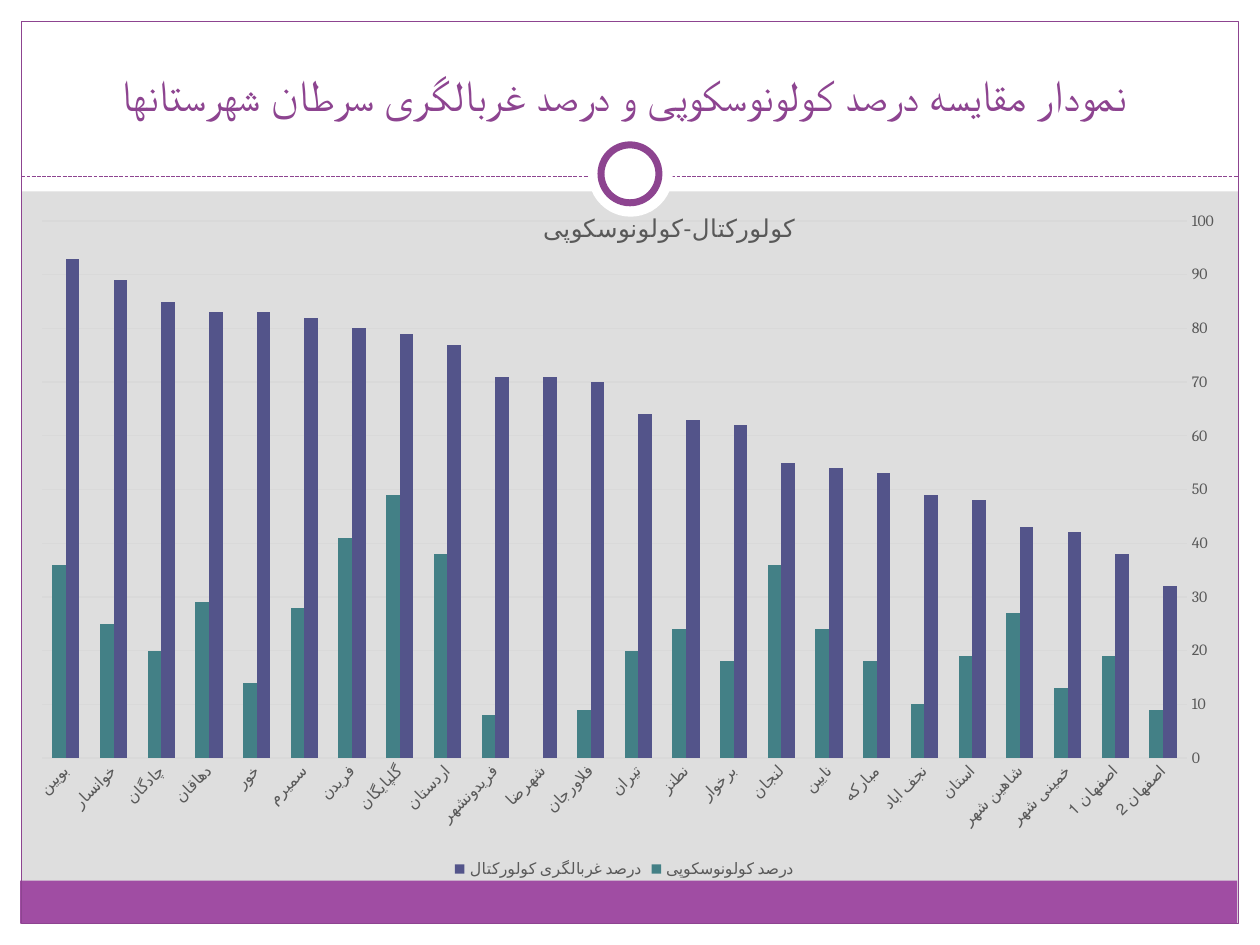
import dataclasses
from typing import Optional

import lxml.etree
import pptx
import pptx.chart.data
import pptx.dml.color
import pptx.enum.chart
import pptx.enum.dml
import pptx.enum.shapes
import pptx.enum.text
import pptx.oxml
import pptx.oxml.ns
import pptx.util

Inches = pptx.util.Inches
Pt = pptx.util.Pt
RGB = pptx.dml.color.RGBColor.from_string
SHAPE = pptx.enum.shapes.MSO_SHAPE
qn = pptx.oxml.ns.qn


@dataclasses.dataclass(frozen=True)
class Theme:
    font: str = "Cambria"
    background: str = "DEDEDE"
    white: str = "FFFFFF"
    band: str = "A04DA3"
    accent: str = "8D4490"
    muted: str = "595959"
    grid: str = "D9D9D9"
    screening: str = "53548A"
    colonoscopy: str = "438086"
    title_size: float = 25
    chart_title_size: float = 14
    label_size: float = 9
    hairline: float = 0.75
    ring: float = 4


@dataclasses.dataclass(frozen=True)
class Panel:
    left: float
    top: float
    width: float
    height: float
    fill: Optional[str] = None
    line: Optional[str] = None
    weight: float = 0.75
    kind: SHAPE = SHAPE.RECTANGLE


@dataclasses.dataclass(frozen=True)
class County:
    name: str
    screening: int
    colonoscopy: Optional[int]


T = Theme()

FRAME = [
    Panel(0, 7.33, 10, 0.17, T.white),
    Panel(0, 0, 10, 1.52, T.white),
    Panel(0, 0, 0.17, 7.5, T.white),
    Panel(9.83, 0, 0.17, 7.5, T.white),
    Panel(0.16, 6.99, 9.66, 0.34, T.band),
    Panel(0.17, 0.17, 9.66, 7.16, line=T.accent),
]
RING = [
    Panel(4.67, 1.05, 0.67, 0.67, T.white, kind=SHAPE.OVAL),
    Panel(4.77, 1.15, 0.46, 0.46, T.white, T.accent, T.ring, SHAPE.OVAL),
]
COUNTIES = [
    County("اصفهان 2", 32, 9),
    County("اصفهان 1", 38, 19),
    County("خمینی شهر", 42, 13),
    County("شاهین شهر", 43, 27),
    County("استان", 48, 19),
    County("نجف اباد", 49, 10),
    County("مبارکه", 53, 18),
    County("نایین", 54, 24),
    County("لنجان", 55, 36),
    County("برخوار", 62, 18),
    County("نطنز", 63, 24),
    County("تیران", 64, 20),
    County("فلاورجان", 70, 9),
    County("شهرضا", 71, None),
    County("فریدونشهر", 71, 8),
    County("اردستان", 77, 38),
    County("گلپایگان", 79, 49),
    County("فریدن", 80, 41),
    County("سمیرم", 82, 28),
    County("خور", 83, 14),
    County("دهاقان", 83, 29),
    County("چادگان", 85, 20),
    County("خوانسار", 89, 25),
    County("بویین", 93, 36),
]


def style_font(font, size: float, color: str) -> None:
    font.name = T.font
    font.size = Pt(size)
    font.bold = False
    font.color.rgb = RGB(color)


def draw_panel(s, panel: Panel) -> None:
    sp = s.shapes.add_shape(panel.kind, Inches(panel.left), Inches(panel.top),
                            Inches(panel.width), Inches(panel.height))
    sp.shadow.inherit = False
    if panel.fill:
        sp.fill.solid()
        sp.fill.fore_color.rgb = RGB(panel.fill)
    else:
        sp.fill.background()
    if panel.line:
        sp.line.color.rgb = RGB(panel.line)
        sp.line.width = Pt(panel.weight)
    else:
        sp.line.fill.background()


def draw_divider(s) -> None:
    line = s.shapes.add_connector(pptx.enum.shapes.MSO_CONNECTOR.STRAIGHT,
                                  Inches(0.17), Inches(1.4), Inches(9.83), Inches(1.4))
    line.line.color.rgb = RGB(T.accent)
    line.line.width = Pt(T.hairline)
    line.line.dash_style = pptx.enum.dml.MSO_LINE.SQUARE_DOT
    lxml.etree.SubElement(line.element.spPr, qn("a:effectLst"))


def draw_title(s, text: str) -> None:
    tf = s.shapes.add_textbox(Inches(0.29), Inches(0.42), Inches(9.33), Inches(0.58)).text_frame
    tf.word_wrap = True
    tf.vertical_anchor = pptx.enum.text.MSO_ANCHOR.BOTTOM
    p = tf.paragraphs[0]
    p.alignment = pptx.enum.text.PP_ALIGN.CENTER
    p.font.size = Pt(T.title_size)
    p._p.get_or_add_pPr().set("rtl", "1")
    r = p.add_run()
    r.text = text
    style_font(r.font, T.title_size, T.accent)


def place(parent, index: int, **box: float) -> None:
    for old in parent.findall(qn("c:layout")):
        parent.remove(old)
    layout = lxml.etree.Element(qn("c:layout"))
    manual = lxml.etree.SubElement(layout, qn("c:manualLayout"))
    if "w" in box:
        lxml.etree.SubElement(manual, qn("c:layoutTarget")).set("val", "inner")
    for mode in ("xMode", "yMode"):
        lxml.etree.SubElement(manual, qn(f"c:{mode}")).set("val", "edge")
    for key, value in box.items():
        lxml.etree.SubElement(manual, qn(f"c:{key}")).set("val", str(value))
    parent.insert(index, layout)


def draw_chart(s) -> None:
    data = pptx.chart.data.CategoryChartData(number_format="0")
    data.categories = [c.name for c in COUNTIES]
    data.add_series("درصد غربالگری کولورکتال", [c.screening for c in COUNTIES])
    data.add_series("درصد کولونوسکوپی", [c.colonoscopy for c in COUNTIES])
    chart = s.shapes.add_chart(pptx.enum.chart.XL_CHART_TYPE.COLUMN_CLUSTERED, Inches(0.08),
                               Inches(1.08), Inches(9.75), Inches(5.92), data).chart
    style_font(chart.font, T.label_size, T.muted)

    plot = chart.plots[0]
    plot.gap_width = 150
    plot.overlap = 0
    plot.vary_by_categories = False
    for series, color in zip(plot.series, (T.screening, T.colonoscopy)):
        series.format.fill.solid()
        series.format.fill.fore_color.rgb = RGB(color)

    for axis in (chart.category_axis, chart.value_axis):
        axis.major_tick_mark = axis.minor_tick_mark = pptx.enum.chart.XL_TICK_MARK.NONE
        axis.format.line.fill.background()
        style_font(axis.tick_labels.font, T.label_size, T.muted)
    chart.category_axis.reverse_order = True
    chart.value_axis.minimum_scale = 0
    chart.value_axis.maximum_scale = 100
    chart.value_axis.major_unit = 10
    grid = chart.value_axis.major_gridlines.format.line
    grid.color.rgb = RGB(T.grid)
    grid.width = Pt(T.hairline)

    chart.has_legend = True
    chart.legend.position = pptx.enum.chart.XL_LEGEND_POSITION.BOTTOM
    chart.legend.include_in_layout = False
    style_font(chart.legend.font, T.label_size, T.muted)

    r = chart.chart_title.text_frame.paragraphs[0].add_run()
    r.text = "کولورکتال-کولونوسکوپی"
    style_font(r.font, T.chart_title_size, T.muted)

    root = chart.element
    place(root.xpath("c:chart/c:title")[0], 1, x=0.43, y=0.1)
    place(root.xpath("c:chart/c:plotArea")[0], 0, x=0.026, y=0.114, w=0.932, h=0.72)
    root.xpath("c:chart/c:title/c:overlay")[0].set("val", "1")
    root.xpath(".//c:catAx/c:txPr/a:bodyPr")[0].set("rot", "-2700000")
    area = lxml.etree.Element(qn("c:spPr"))
    lxml.etree.SubElement(area, qn("a:noFill"))
    lxml.etree.SubElement(lxml.etree.SubElement(area, qn("a:ln")), qn("a:noFill"))
    root.find(qn("c:chart")).addnext(area)


def main() -> None:
    prs = pptx.Presentation()
    prs.slide_width, prs.slide_height = Inches(10), Inches(7.5)
    s = prs.slides.add_slide(prs.slide_layouts[6])
    s.background.fill.solid()
    s.background.fill.fore_color.rgb = RGB(T.background)
    for panel in FRAME:
        draw_panel(s, panel)
    draw_divider(s)
    for panel in RING:
        draw_panel(s, panel)
    draw_title(s, "نمودار مقایسه درصد کولونوسکوپی و درصد غربالگری سرطان شهرستانها")
    draw_chart(s)
    prs.save("out.pptx")


if __name__ == "__main__":
    main()
